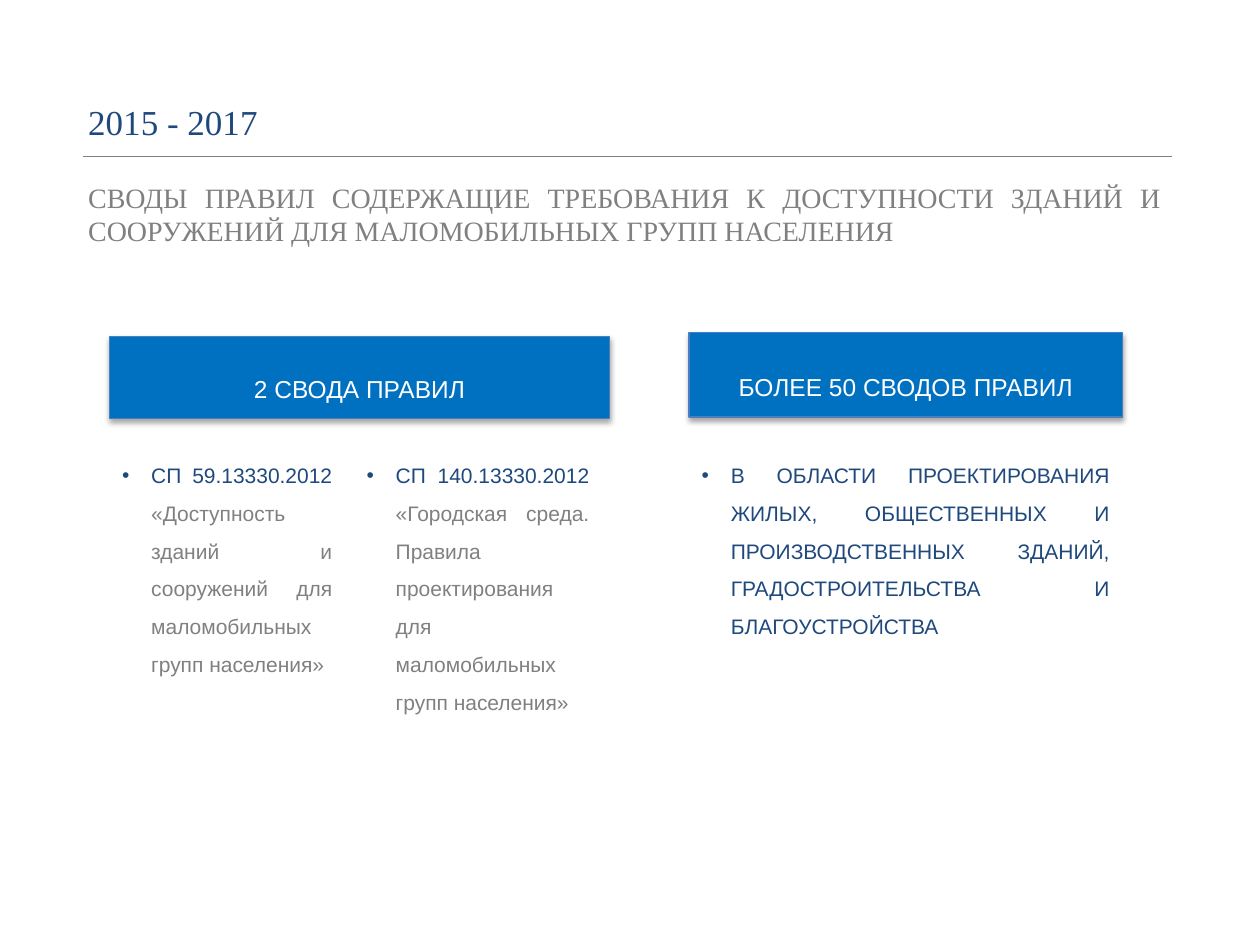
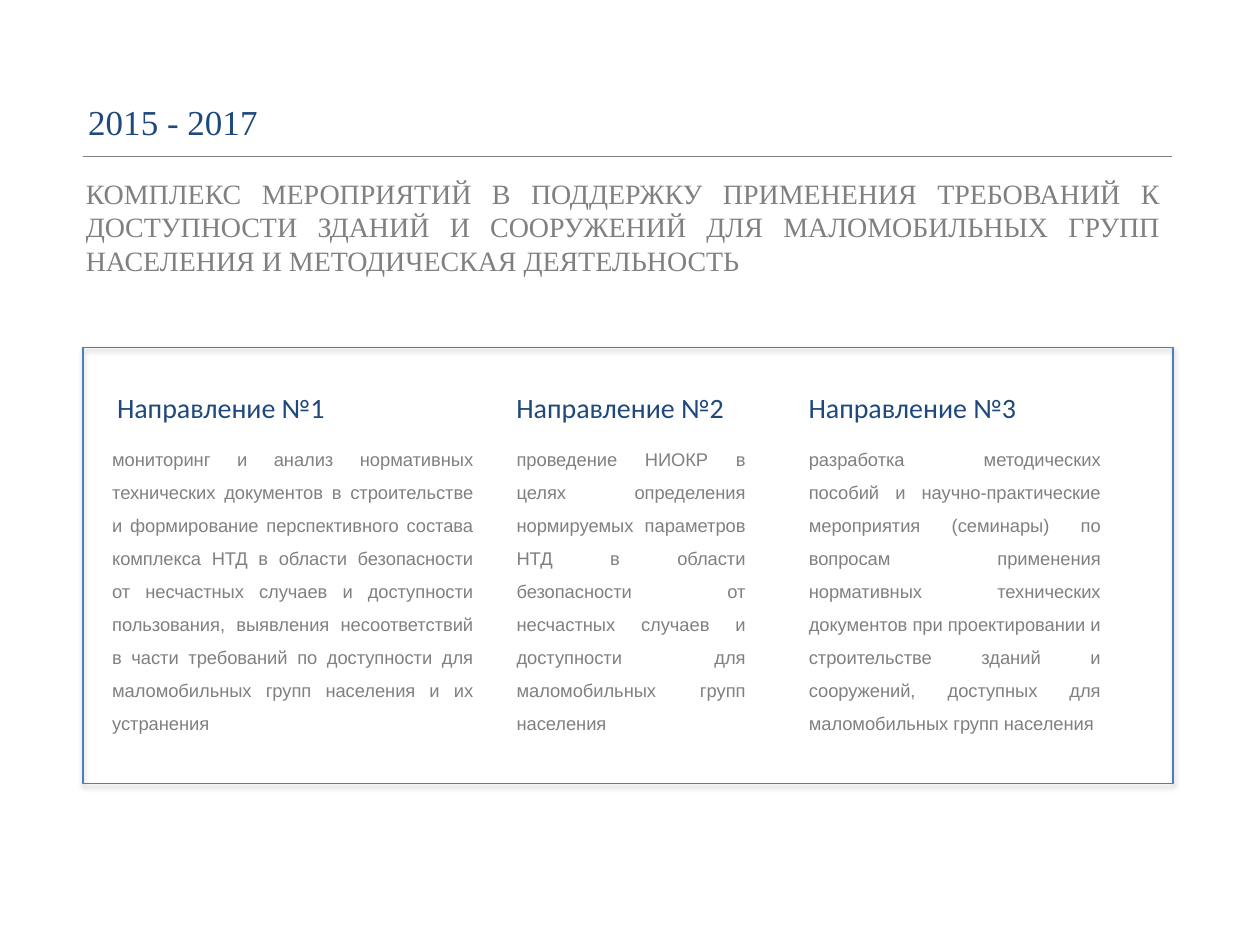
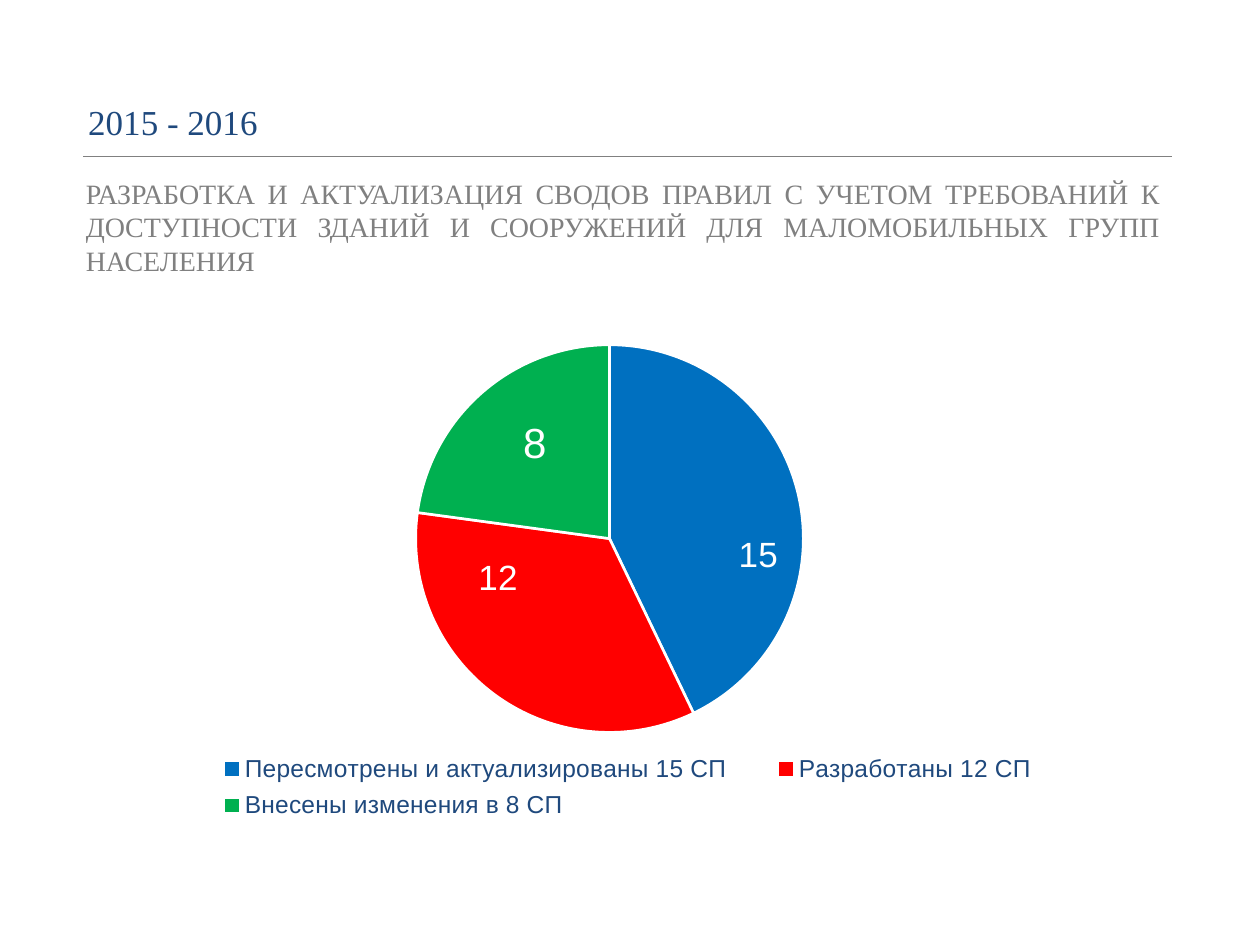
import lxml.etree
import pptx
import pptx.chart.data
import pptx.dml.color
import pptx.enum.chart
import pptx.enum.shapes
import pptx.enum.text
import pptx.oxml.ns
import pptx.util

Pt = pptx.util.Pt
RGBColor = pptx.dml.color.RGBColor
ALIGN = pptx.enum.text.PP_ALIGN
ANCHOR = pptx.enum.text.MSO_ANCHOR
qn = pptx.oxml.ns.qn

NAVY = RGBColor(0x1F, 0x49, 0x7D)
GRAY = RGBColor(0x80, 0x80, 0x80)
BLUE = RGBColor(0x00, 0x70, 0xC0)
RED = RGBColor(0xFF, 0x00, 0x00)
GREEN = RGBColor(0x00, 0xB0, 0x50)
OUTLINE = RGBColor(0x4B, 0x7E, 0xBC)
WHITE = RGBColor(0xFF, 0xFF, 0xFF)

SERIF, SANS, HEADING = "Times New Roman", "Arial", "Calibri"
TITLE_BOX = (43.2, 54, 368.6, 31.7)
RULE_LEFT, RULE_RIGHT, RULE_TOP = 47.5, 670, 89.3
INDENT = 16.6
CONTENT_LAYOUT, COMPARISON_LAYOUT = 1, 4


def child(parent, tag, **attrs):
    el = lxml.etree.SubElement(parent, qn(tag))
    for name, value in attrs.items():
        el.set(name, str(value))
    return el


def place(sp, box):
    sp.left, sp.top, sp.width, sp.height = map(Pt, box)


def style_font(font, size, color, name):
    font.size, font.name, font.bold = Pt(size), name, False
    font.color.rgb = color


def write(sp, runs, size, name, align=ALIGN.LEFT, spacing=1.0, after=0,
          bullet=False):
    tf = sp.text_frame
    tf.word_wrap = True
    tf.auto_size = pptx.enum.text.MSO_AUTO_SIZE.NONE
    tf.vertical_anchor = ANCHOR.TOP
    p = tf.paragraphs[0]
    p.alignment, p.line_spacing = align, spacing
    p.space_before, p.space_after = Pt(0), Pt(after)
    pPr = p._p.get_or_add_pPr()
    pPr.set("marL", str(Pt(INDENT if bullet else 0)))
    pPr.set("indent", str(Pt(-INDENT if bullet else 0)))
    if bullet:
        child(pPr, "a:buFont", typeface=SANS)
        child(pPr, "a:buChar", char="•")
    else:
        child(pPr, "a:buNone")
    for text, color in runs:
        r = p.add_run()
        r.text = text
        style_font(r.font, size, color, name)


def add_header(prs, layout, years, subtitle, box):
    s = prs.slides.add_slide(prs.slide_layouts[layout])
    place(s.shapes.title, TITLE_BOX)
    write(s.shapes.title, [(years, NAVY)], 20, SERIF)
    body = s.placeholders[1]
    place(body, box)
    write(body, [(subtitle, GRAY)], 16, SERIF, ALIGN.JUSTIFY)
    rule = s.shapes.add_connector(
        pptx.enum.shapes.MSO_CONNECTOR.STRAIGHT,
        Pt(RULE_LEFT), Pt(RULE_TOP), Pt(RULE_RIGHT), Pt(RULE_TOP))
    rule.line.color.rgb = GRAY
    rule.line.width = Pt(0.75)
    child(rule._element.spPr, "a:effectLst")
    return s


def add_panel(s, box, fill=None):
    sp = s.shapes.add_shape(pptx.enum.shapes.MSO_SHAPE.RECTANGLE,
                            *map(Pt, box))
    if fill is None:
        sp.fill.background()
    else:
        sp.fill.solid()
        sp.fill.fore_color.rgb = fill
    sp.line.color.rgb = OUTLINE
    sp.line.width = Pt(0.75)
    sp.shadow.inherit = False
    effects = sp._element.spPr.find(qn("a:effectLst"))
    shadow = child(effects, "a:outerShdw", blurRad=Pt(3.1), dist=Pt(1.8),
                   dir=5400000, rotWithShape=0)
    color = child(shadow, "a:srgbClr", val="000000")
    child(color, "a:alpha", val=35000)
    return sp


def add_bar(s, box, text):
    sp = add_panel(s, box, BLUE)
    write(sp, [(text, WHITE)], 14, SANS, ALIGN.CENTER, 1.5)
    sp.text_frame.vertical_anchor = ANCHOR.MIDDLE
    sp.text_frame.margin_top, sp.text_frame.margin_bottom = Pt(8), Pt(3)


def rules_slide(prs):
    s = add_header(
        prs, COMPARISON_LAYOUT, "2015 - 2017",
        "СВОДЫ ПРАВИЛ СОДЕРЖАЩИЕ ТРЕБОВАНИЯ К ДОСТУПНОСТИ ЗДАНИЙ И "
        "СООРУЖЕНИЙ ДЛЯ МАЛОМОБИЛЬНЫХ ГРУПП НАСЕЛЕНИЯ",
        (43.2, 99.4, 627.8, 46))
    add_bar(s, (62.6, 192.2, 285.8, 46.8), "2 СВОДА ПРАВИЛ")
    add_bar(s, (393.8, 190, 247.7, 48.3), "БОЛЕЕ 50 СВОДОВ ПРАВИЛ")
    lists = [
        (2, 62.6, 134.6, 138.2,
         [("СП 59.13330.2012 ", NAVY),
          ("«Доступность зданий и сооружений для маломобильных групп "
           "населения»", GRAY)]),
        (3, 202.3, 141.8, 159.8,
         [("СП 140.13330.2012 ", NAVY),
          ("«Городская среда. Правила проектирования для маломобильных "
           "групп населения»", GRAY)]),
        (4, 393.8, 247.7, 116.6,
         [("В ОБЛАСТИ ПРОЕКТИРОВАНИЯ ЖИЛЫХ, ОБЩЕСТВЕННЫХ И "
           "ПРОИЗВОДСТВЕННЫХ ЗДАНИЙ, ГРАДОСТРОИТЕЛЬСТВА И "
           "БЛАГОУСТРОЙСТВА", NAVY)]),
    ]
    for idx, left, width, height, runs in lists:
        body = s.placeholders[idx]
        place(body, (left, 253.5, width, height))
        write(body, runs, 12, SANS, ALIGN.JUSTIFY, 1.5, 4.5, bullet=True)


def add_directions(s, box, directions):
    left, top, _, _ = box
    add_panel(s, box)
    for number, (dx, heading_dx, width, text) in enumerate(directions, 1):
        heading = s.shapes.add_textbox(
            *map(Pt, (left + heading_dx, top + 20.9, 134.6, 26.6)))
        write(heading, [(f"Направление №{number}", NAVY)], 16, HEADING)
        body = s.placeholders[number + 1]
        place(body, (left + dx, top + 47.5, width, 179.3))
        write(body, [(text, GRAY)], 10.5, SANS, ALIGN.JUSTIFY, 1.5, 4.5)


def directions_slide(prs):
    s = add_header(
        prs, COMPARISON_LAYOUT, "2015 - 2017",
        "КОМПЛЕКС МЕРОПРИЯТИЙ В ПОДДЕРЖКУ ПРИМЕНЕНИЯ ТРЕБОВАНИЙ К "
        "ДОСТУПНОСТИ ЗДАНИЙ И СООРУЖЕНИЙ ДЛЯ МАЛОМОБИЛЬНЫХ ГРУПП "
        "НАСЕЛЕНИЯ И МЕТОДИЧЕСКАЯ ДЕЯТЕЛЬНОСТЬ",
        (41.8, 97.2, 628.6, 65.5))
    add_directions(s, (47.5, 198.7, 622.8, 249.1), [
        (9.4, 12.3, 221,
         "мониторинг и анализ нормативных технических документов в "
         "строительстве и формирование перспективного состава комплекса "
         "НТД в области безопасности от несчастных случаев и доступности "
         "пользования, выявления несоответствий в части требований по "
         "доступности для маломобильных групп населения и их устранения"),
        (240.5, 240.5, 145.4,
         "проведение НИОКР в целях определения нормируемых параметров НТД "
         "в области безопасности от несчастных случаев и доступности для "
         "маломобильных групп населения"),
        (407.5, 407.5, 181.4,
         "разработка методических пособий и научно-практические "
         "мероприятия (семинары) по вопросам применения нормативных "
         "технических документов при проектировании и строительстве "
         "зданий и сооружений, доступных для маломобильных групп "
         "населения"),
    ])


def set_layout(parent, index, **values):
    for old in parent.findall(qn("c:layout")):
        parent.remove(old)
    layout = child(parent, "c:layout")
    parent.insert(index, layout)
    manual = child(layout, "c:manualLayout")
    for tag, value in values.items():
        child(manual, f"c:{tag}", val=value)


def add_pie(s, box, slices):
    data = pptx.chart.data.CategoryChartData()
    data.categories = [name for name, *_ in slices]
    data.add_series("Series 1", [value for _, value, *_ in slices])
    chart = s.shapes.add_chart(pptx.enum.chart.XL_CHART_TYPE.PIE,
                               *map(Pt, box), data).chart
    chart.has_title = False
    style_font(chart.font, 14, NAVY, SANS)
    chart.has_legend = True
    chart.legend.position = pptx.enum.chart.XL_LEGEND_POSITION.BOTTOM
    chart.legend.include_in_layout = False
    style_font(chart.legend.font, 14, NAVY, SANS)
    plot = chart.plots[0]
    plot.vary_by_categories = True
    for i, (_, _, color, size, _) in enumerate(slices):
        point = plot.series[0].points[i]
        point.format.fill.solid()
        point.format.fill.fore_color.rgb = color
        point.format.line.color.rgb = WHITE
        point.format.line.width = Pt(1.5)
        style_font(point.data_label.font, size, WHITE, SANS)
        point.data_label.position = pptx.enum.chart.XL_LABEL_POSITION.CENTER
    root = chart.element
    for label, (*_, (dx, dy)) in zip(root.iter(qn("c:dLbl")), slices):
        set_layout(label, 1, x=dx, y=dy)
    set_layout(next(root.iter(qn("c:plotArea"))), 0, layoutTarget="inner",
               xMode="edge", yMode="edge", x=0.247, y=0.066, w=0.472, h=0.709)
    set_layout(next(root.iter(qn("c:legend"))), 1, xMode="edge",
               yMode="edge", x=0.09, y=0.8, w=0.82, h=0.15)


def chart_slide(prs):
    s = add_header(
        prs, CONTENT_LAYOUT, "2015 - 2016",
        "РАЗРАБОТКА И АКТУАЛИЗАЦИЯ СВОДОВ ПРАВИЛ С УЧЕТОМ ТРЕБОВАНИЙ К "
        "ДОСТУПНОСТИ ЗДАНИЙ И СООРУЖЕНИЙ ДЛЯ МАЛОМОБИЛЬНЫХ ГРУПП НАСЕЛЕНИЯ",
        (41.8, 97.2, 628.6, 65.5))
    add_pie(s, (47.5, 176.4, 622.8, 312.5), [
        ("Пересмотрены и актуализированы 15 СП", 15, BLUE, 20, (0.05, 0.07)),
        ("Разработаны 12 СП", 12, RED, 20, (-0.05, -0.07)),
        ("Внесены изменения в 8 СП", 8, GREEN, 24, (-0.01, -0.04)),
    ])


def main():
    prs = pptx.Presentation()
    prs.slide_width, prs.slide_height = Pt(720), Pt(540)
    rules_slide(prs)
    directions_slide(prs)
    chart_slide(prs)
    prs.save("out.pptx")


if __name__ == "__main__":
    main()
